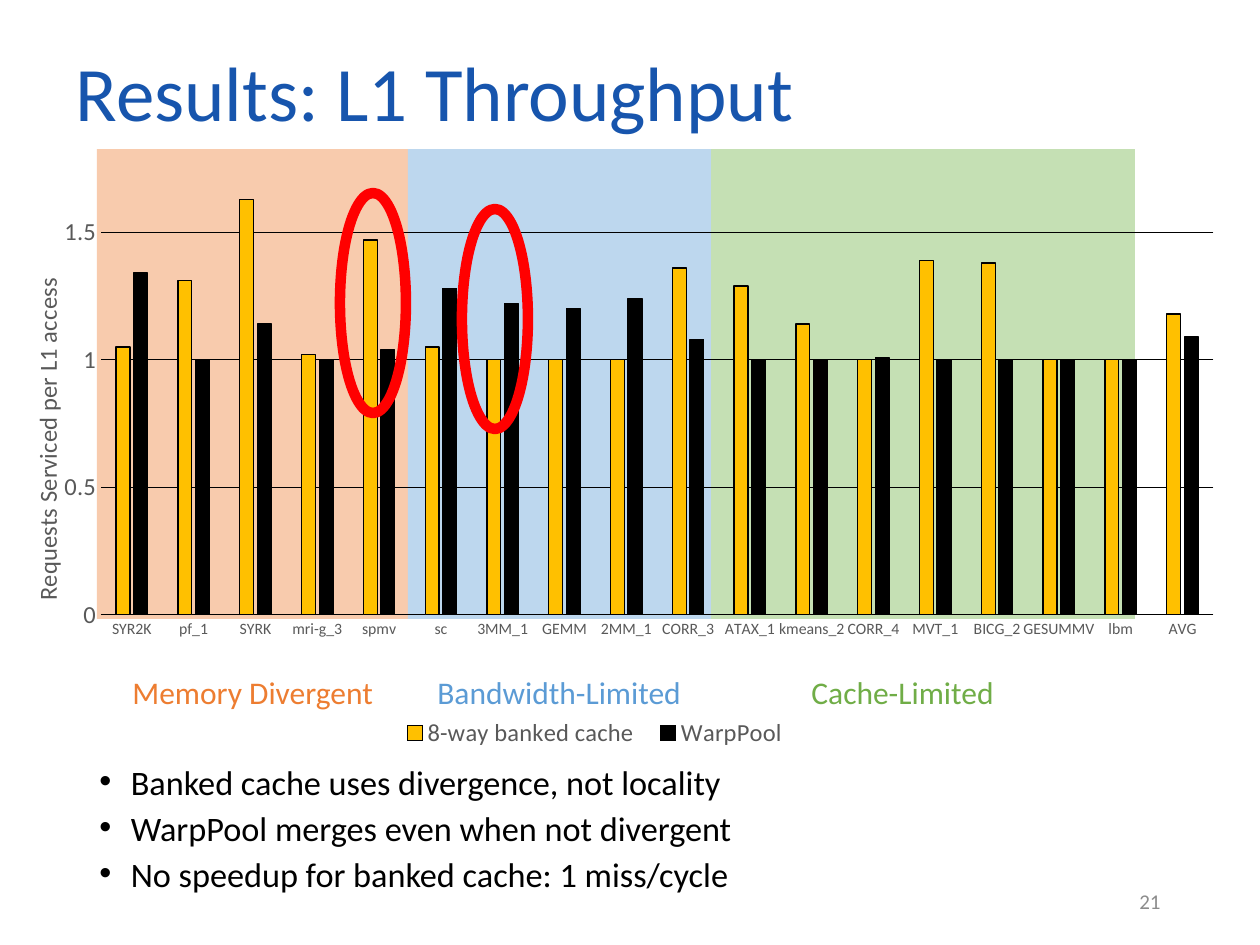
from pptx import Presentation
from pptx.chart.data import CategoryChartData
from pptx.dml.color import RGBColor
from pptx.enum.chart import XL_CHART_TYPE, XL_LEGEND_POSITION, XL_TICK_MARK
from pptx.enum.shapes import MSO_SHAPE
from pptx.enum.text import MSO_ANCHOR, PP_ALIGN
from pptx.oxml import parse_xml
from pptx.oxml.ns import nsdecls, qn
from pptx.util import Emu, Pt

FONT = "Calibri"
BLACK, GREY = "000000", "595959"


def px(n):
    return Emu(round(n * 914400 / 126))


def color(code):
    return RGBColor.from_string(code)


def style(font, size, code):
    font.name, font.size, font.bold = FONT, Pt(size), False
    font.color.rgb = color(code)


def stroke(line, code, width):
    line.color.rgb = color(code)
    line.width = Pt(width)


def place(part, index, inner=False, **sizes):
    """Give a chart part a manual layout, as shares of the chart."""
    for old in part.findall(qn("c:layout")):
        part.remove(old)
    target = '<c:layoutTarget val="inner"/>' if inner else ""
    modes = "".join(f'<c:{k}Mode val="edge"/>' for k in "xy")
    values = "".join(f'<c:{k} val="{v}"/>' for k, v in sizes.items())
    part.insert(index, parse_xml(
        f'<c:layout {nsdecls("c")}><c:manualLayout>{target}{modes}{values}'
        "</c:manualLayout></c:layout>"))


class Deck:
    def __init__(self, width, height):
        self.prs = Presentation()
        self.prs.slide_width, self.prs.slide_height = px(width), px(height)
        self.slide = self.prs.slides.add_slide(self.prs.slide_layouts[5])
        self.shapes = self.slide.shapes

    def title(self, box, text):
        shape = self.shapes.title
        shape.left, shape.top, shape.width, shape.height = map(px, box)
        frame = shape.text_frame
        frame.vertical_anchor = MSO_ANCHOR.MIDDLE
        para = frame.paragraphs[0]
        para.alignment = PP_ALIGN.LEFT
        self.run(para, text, 44, "1755AD")

    def run(self, para, text, size, code):
        run = para.add_run()
        run.text = text
        style(run.font, size, code)

    def text(self, box, lines, size, code, space=None, before=0,
             align=PP_ALIGN.LEFT, anchor=MSO_ANCHOR.TOP, bullet=False):
        frame = self.shapes.add_textbox(*map(px, box)).text_frame
        frame.word_wrap = True
        frame.vertical_anchor = anchor
        for i, line in enumerate(lines):
            para = frame.add_paragraph() if i else frame.paragraphs[0]
            para.alignment, para.line_spacing = align, space
            para.space_before = Pt(before)
            if bullet:
                props = para._p.get_or_add_pPr()
                props.set("marL", "228600")
                props.set("indent", "-228600")
                props.append(parse_xml(
                    f'<a:buFont {nsdecls("a")} typeface="Arial"/>'))
                props.append(parse_xml(
                    f'<a:buChar {nsdecls("a")} char="•"/>'))
            self.run(para, line, size, code)

    def zone(self, box, code):
        shape = self.shapes.add_shape(MSO_SHAPE.RECTANGLE, *map(px, box))
        shape.shadow.inherit = False
        shape.fill.solid()
        shape.fill.fore_color.rgb = color(code)
        shape.line.fill.background()

    def ring(self, box):
        shape = self.shapes.add_shape(MSO_SHAPE.OVAL, *map(px, box))
        shape.shadow.inherit = False
        shape.fill.background()
        stroke(shape.line, "FF0000", 6)

    def chart(self, box, cats, series, label):
        data = CategoryChartData()
        data.categories = cats
        for name, _, values in series:
            data.add_series(name, values)
        chart = self.shapes.add_chart(
            XL_CHART_TYPE.COLUMN_CLUSTERED, *map(px, box), data).chart
        style(chart.font, 10, BLACK)
        chart.has_title = False
        place(chart._chartSpace.chart.plotArea, 0, True,
              x=0.1, y=0.03, w=0.89, h=0.68)

        # Columns
        plot = chart.plots[0]
        plot.gap_width, plot.overlap = 219, -27
        plot.vary_by_categories = False
        for bars, (_, code, _) in zip(plot.series, series):
            bars.format.fill.solid()
            bars.format.fill.fore_color.rgb = color(code)
            stroke(bars.format.line, BLACK, 0.75)

        # Axes
        across, up = chart.category_axis, chart.value_axis
        for axis, size in ((across, 9), (up, 14)):
            axis.major_tick_mark = axis.minor_tick_mark = XL_TICK_MARK.NONE
            style(axis.tick_labels.font, size, GREY)
        stroke(across.format.line, BLACK, 0.75)
        up.format.line.fill.background()
        up.minimum_scale, up.maximum_scale, up.major_unit = 0, 1.75, 0.5
        stroke(up.major_gridlines.format.line, BLACK, 0.75)
        para = up.axis_title.text_frame.paragraphs[0]
        self.run(para, label, 14, GREY)
        place(up.axis_title._element, 1, x=0.04, y=0.19)

        # Legend
        chart.has_legend = True
        legend = chart.legend
        legend.position = XL_LEGEND_POSITION.BOTTOM
        legend.include_in_layout = False
        style(legend.font, 14, GREY)
        place(legend._element, 1, x=0.33, y=0.86, w=0.33, h=0.06)


CATS = ["SYR2K", "pf_1", "SYRK", "mri-g_3", "spmv", "sc", "3MM_1", "GEMM",
        "2MM_1", "CORR_3", "ATAX_1", "kmeans_2", "CORR_4", "MVT_1", "BICG_2",
        "GESUMMV", "lbm", "AVG"]
SERIES = [
    ("8-way banked cache", "FFC000",
     [1.05, 1.31, 1.63, 1.02, 1.47, 1.05, 1, 1, 1, 1.36, 1.29, 1.14, 1, 1.39,
      1.38, 1, 1, 1.18]),
    ("WarpPool", BLACK,
     [1.34, 1, 1.14, 1, 1.04, 1.28, 1.22, 1.2, 1.24, 1.08, 1, 1, 1.01, 1, 1,
      1, 1, 1.09]),
]
# Left, right, fill, label, label left, label colour
ZONES = [
    (97, 408, "F8CBAD", "Memory Divergent", 120, "ED7D31"),
    (408, 711, "BDD7EE", "Bandwidth-Limited", 425, "5B9BD5"),
    (711, 1135, "C5E0B4", "Cache-Limited", 799, "70AD47"),
]
POINTS = ["Banked cache uses divergence, not locality",
          "WarpPool merges even when not divergent",
          "No speedup for banked cache: 1 miss/cycle"]


def main():
    deck = Deck(1260, 945)
    deck.title((63, 33, 1134, 116), "Results: L1 Throughput")

    # Shaded groups behind the chart
    for left, right, fill, *_ in ZONES:
        deck.zone((left, 149, right - left, 470), fill)
    deck.chart((-24, 149, 1250, 656), CATS, SERIES,
               "Requests Serviced per L1 access")
    for *_, label, left, code in ZONES:
        deck.text((left, 674, 311, 44), [label], 18, code, 0.8, 10)

    # Highlighted pairs
    for left, top in ((462, 209), (340, 193)):
        deck.ring((left, top, 66, 220))

    # Findings and page number
    deck.text((87, 766, 1086, 142), POINTS, 19.6, BLACK, 0.7, 10, bullet=True)
    deck.text((890, 876, 283, 50), ["21"], 12, "8C8C8C",
              align=PP_ALIGN.RIGHT, anchor=MSO_ANCHOR.MIDDLE)
    deck.prs.save("out.pptx")


if __name__ == "__main__":
    main()
